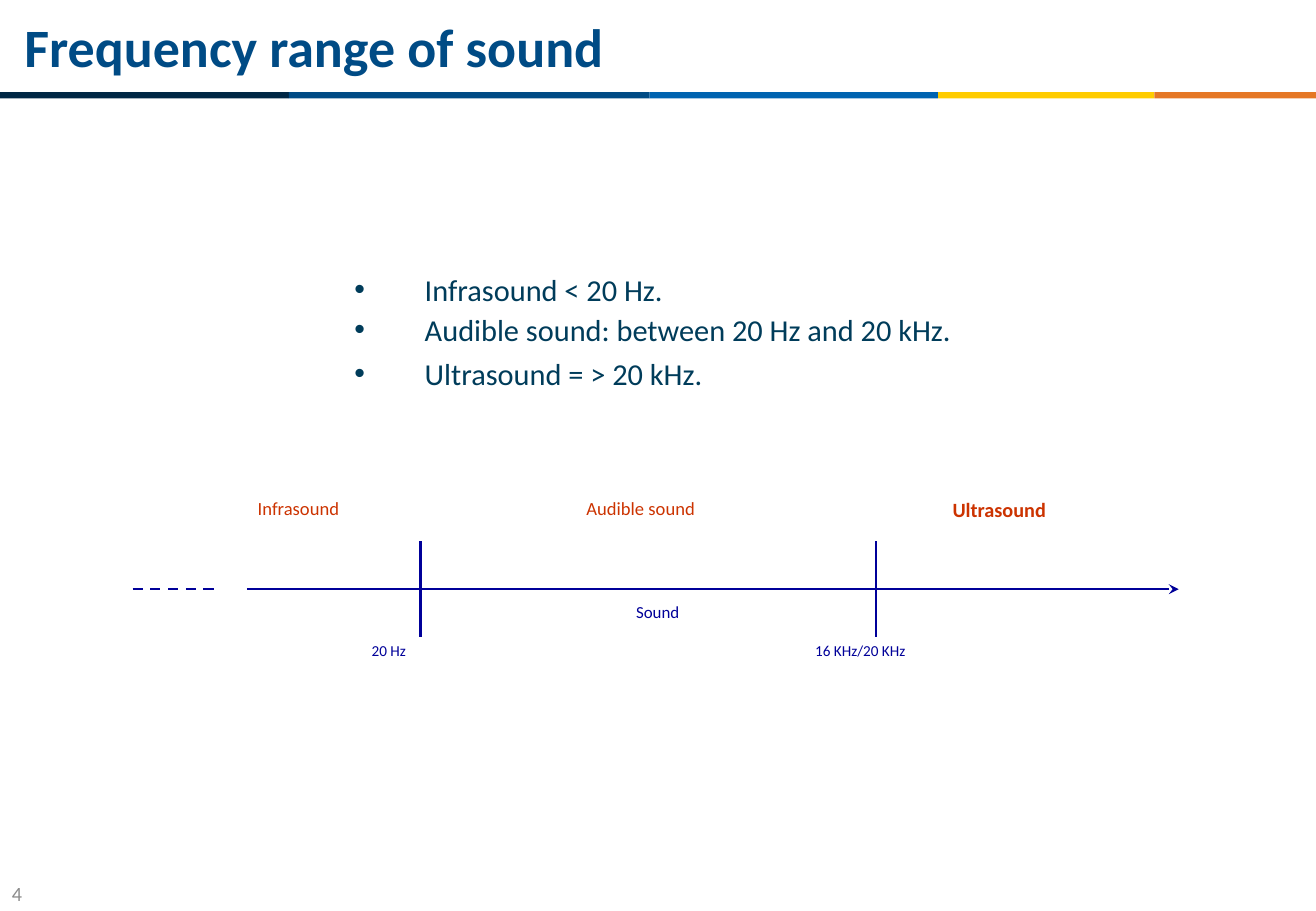
import pptx
import pptx.util
import pptx.dml.color
import pptx.enum.dml
import pptx.enum.shapes
import pptx.enum.text
import lxml.etree

Cm = pptx.util.Cm
Pt = pptx.util.Pt
rgb = pptx.dml.color.RGBColor.from_string
LEFT = pptx.enum.text.PP_ALIGN.LEFT
CENTER = pptx.enum.text.PP_ALIGN.CENTER
TOP = pptx.enum.text.MSO_ANCHOR.TOP
MIDDLE = pptx.enum.text.MSO_ANCHOR.MIDDLE
NAVY, RED = "000099", "CC3300"


def add_text(box, lines, size, color, bold=False, align=LEFT, anchor=TOP, insets=(0.15, 0.08)):
    sp = s.shapes.add_textbox(*[Cm(v) for v in box])
    tf = sp.text_frame
    tf.word_wrap = True
    tf.vertical_anchor = anchor
    tf.margin_left = tf.margin_right = Cm(insets[0])
    tf.margin_top = tf.margin_bottom = Cm(insets[1])
    tf.text = lines
    for p in tf.paragraphs:
        p.alignment = align
        for r in p.runs:
            r.font.name = "Calibri"
            r.font.size = Pt(size)
            r.font.bold = bold
            r.font.color.rgb = rgb(color)
    return tf


def add_line(x1, y1, x2, y2):
    line = s.shapes.add_connector(
        pptx.enum.shapes.MSO_CONNECTOR.STRAIGHT, Cm(x1), Cm(y1), Cm(x2), Cm(y2))
    line.line.color.rgb = rgb(NAVY)
    line.line.width = Pt(1.5)
    ln = line.line._get_or_add_ln()
    ln.addnext(lxml.etree.Element(pptx.oxml.ns.qn("a:effectLst")))
    return line


prs = pptx.Presentation()
prs.slide_width = Cm(27.51)
prs.slide_height = Cm(19.05)
s = prs.slides.add_slide(prs.slide_layouts[6])

x = 0
for width, color in [(6.04, "002745"), (7.54, "004B85"), (6.03, "0063B0"),
                     (4.52, "FFCC00"), (3.38, "E57725")]:
    bar = s.shapes.add_shape(pptx.enum.shapes.MSO_SHAPE.RECTANGLE,
                             Cm(x), Cm(1.93), Cm(width), Cm(0.13))
    bar.shadow.inherit = False
    bar.fill.solid()
    bar.fill.fore_color.rgb = rgb(color)
    bar.line.fill.background()
    x += width

title = add_text((0, 0, 27.48, 1.93), "Frequency range of sound", 32, "004B85",
                 bold=True, anchor=MIDDLE, insets=(0.25, 0.13))
title.margin_left = Cm(0.51)
add_text((0, 18.31, 1.4, 0.74), "4", 12, "8C8C8C", anchor=MIDDLE, insets=(0.25, 0.13))

ranges = add_text((7.16, 5.54, 13.77, 2.79),
                  "Infrasound < 20 Hz.\nAudible sound: between 20 Hz and 20 kHz.\nUltrasound = > 20 kHz.",
                  18, "003C5A", insets=(0.25, 0.13))
for p, spacing in zip(ranges.paragraphs, (1.0, 1.1, 1.2)):
    p.line_spacing = spacing
    pPr = p._p.get_or_add_pPr()
    pPr.set("marL", str(Cm(1.47)))
    pPr.set("indent", str(-Cm(1.47)))
    lxml.etree.SubElement(pPr, pptx.oxml.ns.qn("a:buFont")).set("typeface", "Arial")
    lxml.etree.SubElement(pPr, pptx.oxml.ns.qn("a:buChar")).set("char", "•")

axis_y = 12.32
axis = add_line(5.16, axis_y, 24.64, axis_y)
tail = lxml.etree.SubElement(axis.line._get_or_add_ln(), pptx.oxml.ns.qn("a:tailEnd"))
tail.set("type", "stealth")
dashes = add_line(2.77, axis_y, 4.62, axis_y)
dashes.line.dash_style = pptx.enum.dml.MSO_LINE.DASH
for tick_x in (8.79, 18.31):
    add_line(tick_x, axis_y - 1, tick_x, axis_y + 1)

for box, label, size, color, bold, align in [
    ((3.56, 10.31, 5.36, 1.12), "Infrasound", 11, RED, False, CENTER),
    ((10.87, 10.31, 5.05, 1.12), "Audible sound", 11, RED, False, CENTER),
    ((18.31, 10.31, 5.16, 1.19), "Ultrasound", 12, RED, True, CENTER),
    ((13, 12.5, 1.5, 0.91), "Sound", 10, NAVY, False, CENTER),
    ((7.62, 13.34, 2.31, 1.02), "20 Hz", 9, NAVY, False, LEFT),
    ((16.89, 13.34, 5.03, 1.02), "16 KHz/20 KHz", 9, NAVY, False, LEFT),
]:
    add_text(box, label, size, color, bold, align)

prs.save("out.pptx")
